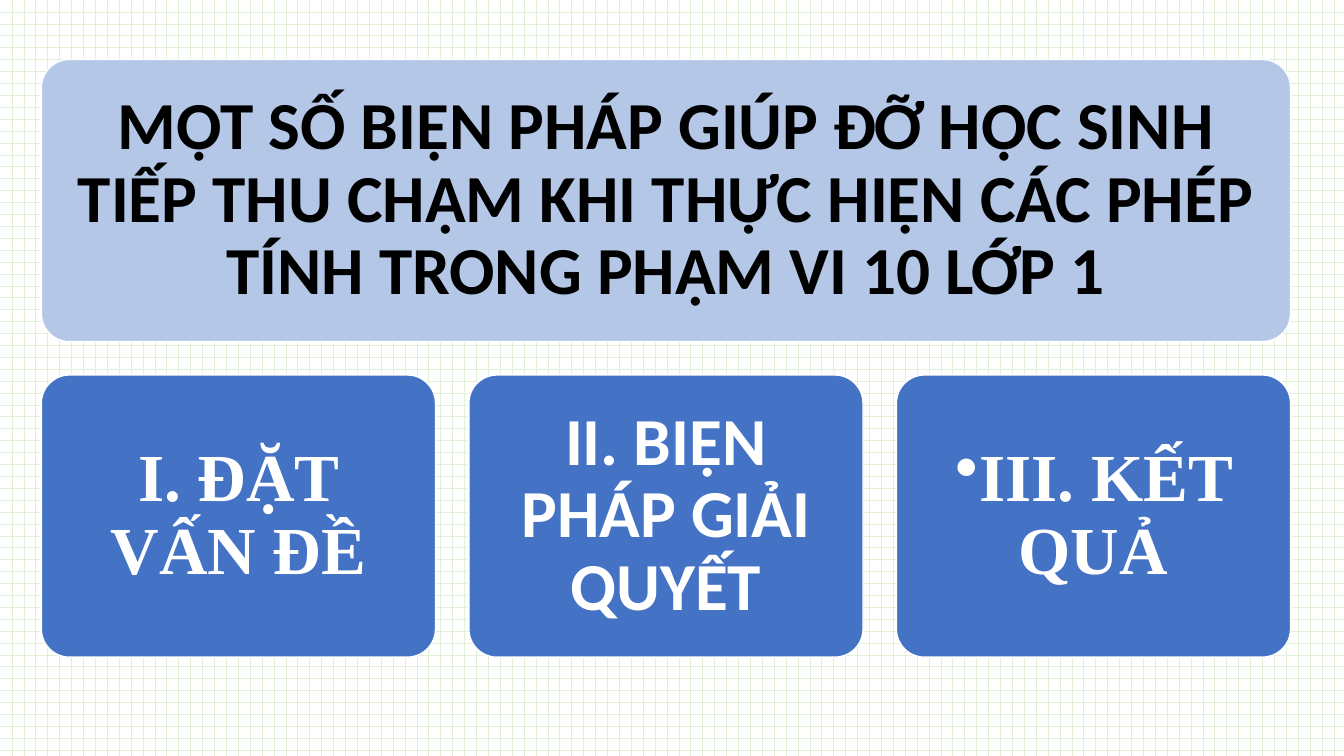
from dataclasses import dataclass
from lxml.etree import SubElement as Sub
from pptx import Presentation
from pptx.dml.color import RGBColor as Rgb
from pptx.enum.dml import MSO_PATTERN as Pat
from pptx.enum.shapes import MSO_SHAPE as Kind
from pptx.enum.text import MSO_ANCHOR as Anchor, PP_ALIGN as Align
from pptx.oxml.ns import qn
from pptx.util import Inches, Pt


@dataclass(frozen=True)
class Theme:
    dark: Rgb = Rgb.from_string("000000")
    light: Rgb = Rgb.from_string("FFFFFF")
    pale: Rgb = Rgb.from_string("B4C7E7")
    blue: Rgb = Rgb.from_string("4472C4")
    green: Rgb = Rgb.from_string("E2F0D9")
    sans: str = "Calibri"
    serif: str = "Times New Roman"
    size: int = 48


class Deck:
    """Draw cards on a grid of three columns and two rows."""

    left, top = 0.41, 0.59
    wide, high, gap = 3.91, 2.8, 0.33

    def __init__(self, theme):
        self.theme = theme
        self.show = Presentation()
        self.show.slide_width = Inches(13.33)
        self.show.slide_height = Inches(7.5)
        self.slide = self.show.slides.add_slide(self.show.slide_layouts[6])

    def paper(self):
        fill = self.slide.background.fill
        fill.patterned()
        fill.pattern = Pat.HORIZONTAL_BRICK
        fill.fore_color.rgb = self.theme.green
        fill.back_color.rgb = self.theme.light

    def card(self, col, row, text, face, fill, ink, span=1, mark=None):
        x = self.left + col * (self.wide + self.gap)
        y = self.top + row * (self.high + self.gap)
        w = span * self.wide + (span - 1) * self.gap
        box = self.slide.shapes.add_shape(
            Kind.ROUNDED_RECTANGLE, Inches(x), Inches(y), Inches(w), Inches(self.high))
        box.adjustments[0] = 0.1
        box.shadow.inherit = False
        box.fill.solid()
        box.fill.fore_color.rgb = fill
        box.line.color.rgb = self.theme.light
        box.line.width = Pt(1)
        self.label(box.text_frame, text, face, ink, mark)

    def label(self, frame, text, face, ink, mark):
        frame.text = text
        frame.word_wrap = True
        frame.vertical_anchor = Anchor.MIDDLE
        frame.margin_left = frame.margin_right = Inches(0.2)
        frame.margin_top = frame.margin_bottom = Inches(0.2)
        para = frame.paragraphs[0]
        para.alignment = Align.CENTER
        para.line_spacing = 0.9
        if mark:
            Sub(para._p.get_or_add_pPr(), qn("a:buChar"), char=mark)
        font = para.runs[0].font
        font.name = face
        font.size = Pt(self.theme.size)
        font.bold = True
        font.color.rgb = ink


def main():
    look = Theme()
    deck = Deck(look)
    deck.paper()
    deck.card(0, 0, "MỘT SỐ BIỆN PHÁP GIÚP ĐỠ HỌC SINH TIẾP THU CHẬM KHI THỰC HIỆN "
              "CÁC PHÉP TÍNH TRONG PHẠM VI 10 LỚP 1",
              look.sans, look.pale, look.dark, span=3)
    parts = [
        ("I. ĐẶT VẤN ĐỀ", look.serif, None),
        ("II. BIỆN PHÁP GIẢI QUYẾT", look.sans, None),
        ("III. KẾT QUẢ", look.serif, "•"),
    ]
    for col, (text, face, mark) in enumerate(parts):
        deck.card(col, 1, text, face, look.blue, look.light, mark=mark)
    deck.show.save("out.pptx")


if __name__ == "__main__":
    main()
